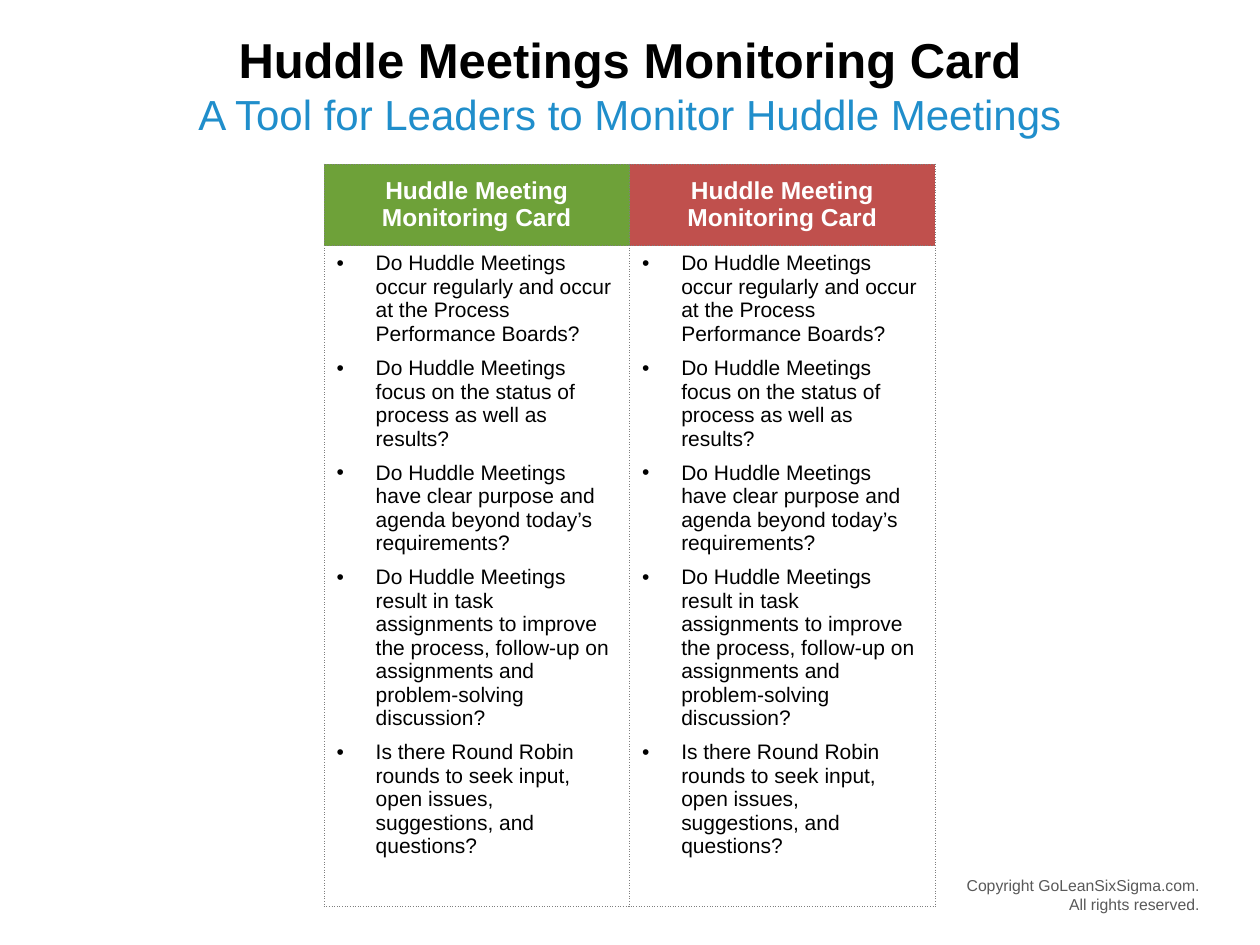
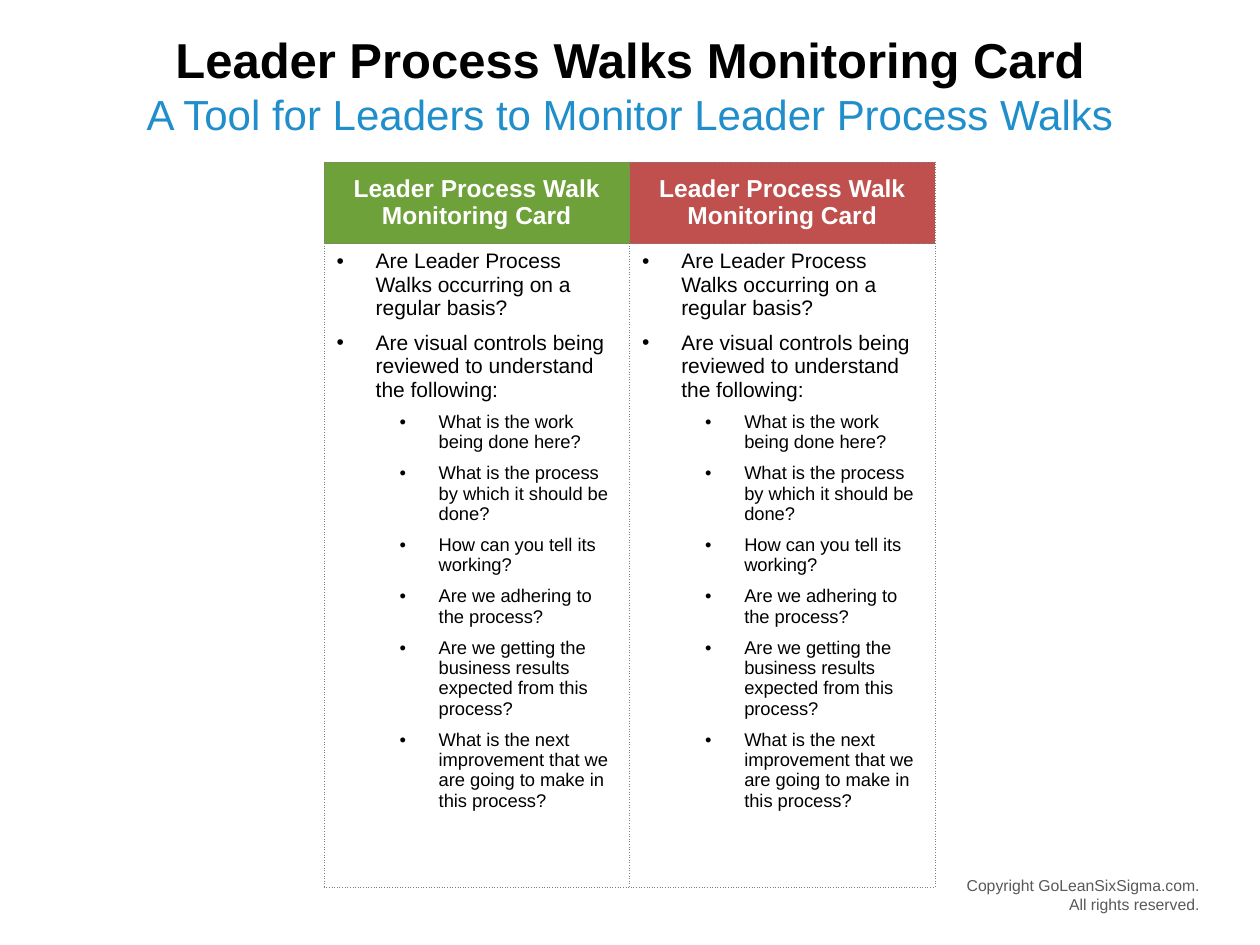
from copy import deepcopy

from lxml import etree
from pptx import Presentation
from pptx import util as u
from pptx.dml.color import RGBColor
from pptx.enum import text
from pptx.oxml import ns

BLACK = RGBColor(0x00, 0x00, 0x00)
WHITE = RGBColor(0xFF, 0xFF, 0xFF)
BLUE = RGBColor(0x20, 0x8E, 0xCB)
GREEN = RGBColor(0x6E, 0xA1, 0x39)
RED = RGBColor(0xC0, 0x50, 0x4D)
GREY = RGBColor(0x59, 0x59, 0x59)
BORDER = "7F7F7F"

HUDDLE_QUESTIONS = [
    (0, "Do Huddle Meetings occur regularly and occur at the Process Performance Boards?"),
    (0, "Do Huddle Meetings focus on the status of process as well as results?"),
    (0, "Do Huddle Meetings have clear purpose and agenda beyond today’s requirements?"),
    (0, "Do Huddle Meetings result in task assignments to improve the process, "
        "follow-up on assignments and problem-solving discussion?"),
    (0, "Is there Round Robin rounds to seek input, open issues, suggestions, and questions?"),
]
WALK_QUESTIONS = [
    (0, "Are Leader Process Walks occurring on a regular basis?"),
    (0, "Are visual controls being reviewed to understand the following:"),
    (1, "What is the work being done here?"),
    (1, "What is the process by which it should be done?"),
    (1, "How can you tell its working?"),
    (1, "Are we adhering to the process?"),
    (1, "Are we getting the business results expected from this process?"),
    (1, "What is the next improvement that we are going to make in this process?"),
]


class Deck:
    font = "Arial"
    centre = text.PP_ALIGN.CENTER
    right = text.PP_ALIGN.RIGHT
    card_colours = (GREEN, RED)
    question_sizes = (12, 10.5)

    def __init__(self):
        self.prs = Presentation()
        self.prs.slide_width, self.prs.slide_height = u.Cm(25.4), u.Cm(19.05)

    def new_slide(self):
        self.s = self.prs.slides.add_slide(self.prs.slide_layouts[5])

    def paragraph(self, p, words, size, colour, bold=False, align=None):
        p.text = words
        p.alignment = align
        style = {"name": self.font, "size": u.Pt(size), "bold": bold}
        for r in p.runs:
            for key, value in style.items():
                setattr(r.font, key, value)
            r.font.color.rgb = colour
        for br in p._p.findall(ns.qn("a:br")):
            br.append(deepcopy(p.runs[0]._r.rPr))

    def title(self, words):
        sp = self.s.shapes.title
        place = {"left": 1.27, "top": 0.36, "width": 22.86, "height": 1.65}
        for key, value in place.items():
            setattr(sp, key, u.Cm(value))
        tf = sp.text_frame
        tf.auto_size = text.MSO_AUTO_SIZE.NONE
        tf.vertical_anchor = text.MSO_ANCHOR.MIDDLE
        self.paragraph(tf.paragraphs[0], words, 28, BLACK, True, self.centre)

    def textbox(self, words, box, size, colour, align):
        tf = self.s.shapes.add_textbox(*map(u.Cm, box)).text_frame
        tf.word_wrap = True
        self.paragraph(tf.paragraphs[0], words, size, colour, align=align)

    def subtitle(self, words):
        self.textbox(words, (0, 1.65, 25.4, 1.27), 24, BLUE, self.centre)

    def copyright(self):
        self.textbox("Copyright GoLeanSixSigma.com.\nAll rights reserved.",
                     (15.62, 17.53, 8.81, 1.02), 9, GREY, self.right)

    def borders(self, cell):
        tcPr = cell._tc.get_or_add_tcPr()
        for i, side in enumerate(("lnL", "lnR", "lnT", "lnB")):
            ln = etree.Element(ns.qn("a:" + side), w=str(u.Pt(0.25)))
            fill = etree.SubElement(ln, ns.qn("a:solidFill"))
            etree.SubElement(fill, ns.qn("a:srgbClr"), val=BORDER)
            etree.SubElement(ln, ns.qn("a:prstDash"), val="sysDot")
            tcPr.insert(i, ln)

    def bullet(self, p, level):
        p.level = level
        p.space_after = u.Pt(6)
        pPr = p._p.get_or_add_pPr()
        pPr.set("marL", str(u.Cm(0.79 + 1.27 * level)))
        pPr.set("indent", str(u.Cm(-0.79)))
        etree.SubElement(pPr, ns.qn("a:buFont"), typeface=self.font)
        etree.SubElement(pPr, ns.qn("a:buChar"), char="•")

    def questions(self, tf, items):
        for i, (level, words) in enumerate(items):
            p = tf.add_paragraph() if i else tf.paragraphs[0]
            self.bullet(p, level)
            self.paragraph(p, words, self.question_sizes[level], BLACK)

    def cards(self, heading, items, top, body_height):
        width, head_height = 6.16, 1.65
        count = len(self.card_colours)
        box = (6.53, top, width * count, head_height + body_height)
        table = self.s.shapes.add_table(2, count, *map(u.Cm, box)).table
        table.first_row = table.horz_banding = False
        for row, height in zip(table.rows, (head_height, body_height)):
            row.height = u.Cm(height)
        for i, colour in enumerate(self.card_colours):
            table.columns[i].width = u.Cm(width)
            head, body = table.cell(0, i), table.cell(1, i)
            head.fill.solid()
            head.fill.fore_color.rgb = colour
            head.vertical_anchor = text.MSO_ANCHOR.MIDDLE
            self.paragraph(head.text_frame.paragraphs[0], heading, 14, WHITE, True, self.centre)
            body.fill.background()
            self.questions(body.text_frame, items)
            for cell in (head, body):
                self.borders(cell)

    def card_slide(self, title, subtitle, heading, items, top, body_height):
        self.new_slide()
        self.copyright()
        self.title(title)
        self.cards(heading, items, top, body_height)
        self.subtitle(subtitle)


def main():
    deck = Deck()
    deck.card_slide("Huddle Meetings Monitoring Card",
                    "A Tool for Leaders to Monitor Huddle Meetings",
                    "Huddle Meeting\nMonitoring Card", HUDDLE_QUESTIONS, 3.3, 13.32)
    deck.card_slide("Leader Process Walks Monitoring Card",
                    "A Tool for Leaders to Monitor Leader Process Walks",
                    "Leader Process Walk\nMonitoring Card", WALK_QUESTIONS, 3.26, 12.97)
    deck.prs.save("out.pptx")


if __name__ == "__main__":
    main()
